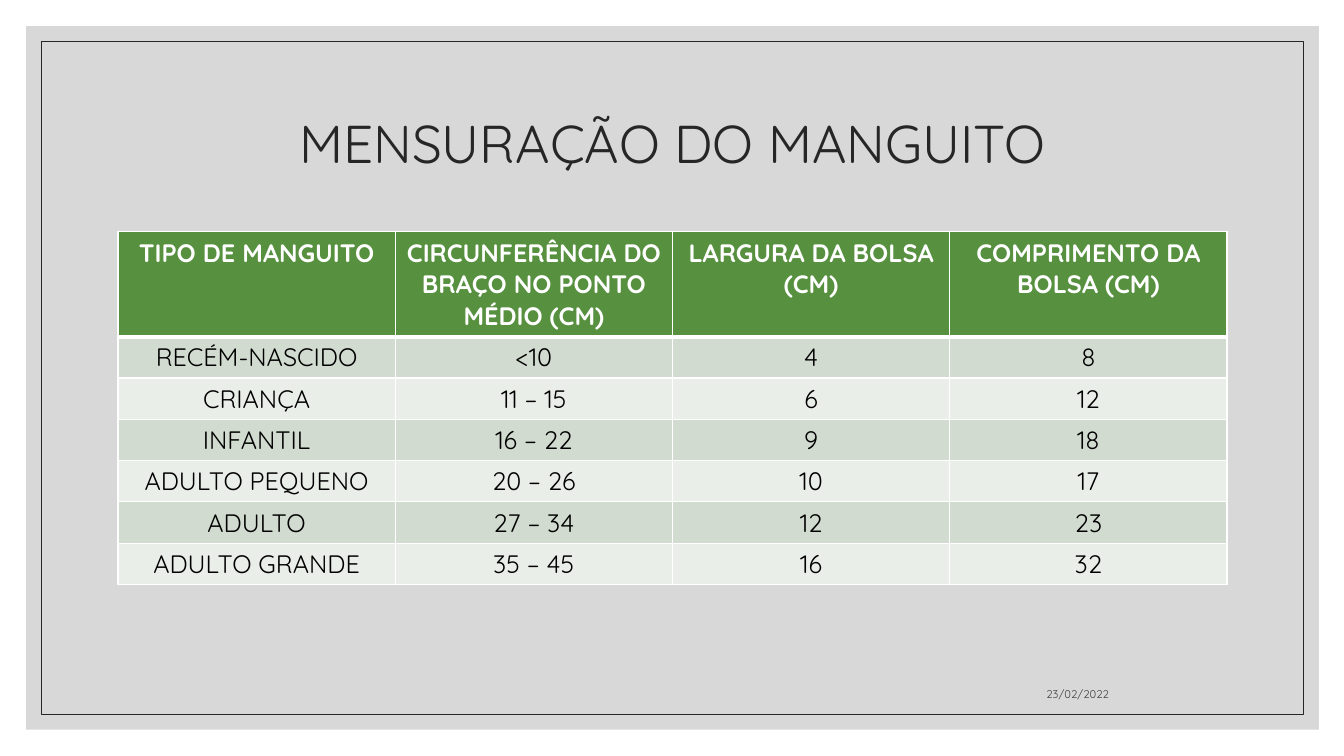
from dataclasses import dataclass

from lxml import etree
from pptx import Presentation
from pptx.dml.color import RGBColor
from pptx.enum import shapes, text
from pptx.oxml.ns import qn
from pptx.util import Inches, Pt


@dataclass(frozen=True)
class Theme:
    font: str = "Quicksand"
    panel: str = "BFBFBF"
    panel_opacity: int = 60
    ink: str = "262626"
    date_ink: str = "404040"
    header: str = "57903F"
    bands: tuple = ("D1DBCF", "EAEEE8")
    white: str = "FFFFFF"
    black: str = "000000"
    title_size: int = 38
    table_size: int = 18
    date_size: int = 8


THEME = Theme()
TABLE_LEFT, TABLE_TOP, TABLE_WIDTH = 1.17, 2.3, 11
HEADER_HEIGHT, ROW_HEIGHT = 1.04, 0.41
CUFF_ROWS = [
    ("TIPO DE MANGUITO", "CIRCUNFERÊNCIA DO BRAÇO NO PONTO MÉDIO (CM)",
     "LARGURA DA BOLSA (CM)", "COMPRIMENTO DA BOLSA (CM)"),
    ("RECÉM-NASCIDO", "<10", "4", "8"),
    ("CRIANÇA", "11 – 15", "6", "12"),
    ("INFANTIL", "16 – 22", "9", "18"),
    ("ADULTO PEQUENO", "20 – 26", "10", "17"),
    ("ADULTO", "27 – 34", "12", "23"),
    ("ADULTO GRANDE", "35 – 45", "16", "32"),
]


def write(frame, words, size, color, align, bold=False):
    frame.word_wrap = True
    frame.text = words
    para = frame.paragraphs[0]
    para.alignment = align
    for span in para.runs:
        span.font.name = THEME.font
        span.font.size = Pt(size)
        span.font.bold = bold
        span.font.color.rgb = RGBColor.from_string(color)
    return para


def add_text(page, place, words, size, color, align, anchor):
    box = page.shapes.add_textbox(*map(Inches, place))
    box.text_frame.vertical_anchor = anchor
    return write(box.text_frame, words, size, color, align)


def add_rectangle(page, place):
    rectangle = page.shapes.add_shape(shapes.MSO_SHAPE.RECTANGLE, *map(Inches, place))
    rectangle.shadow.inherit = False
    return rectangle


def add_panel(page):
    panel = add_rectangle(page, (0.26, 0.26, 12.82, 6.98))
    panel.line.fill.background()
    panel.fill.solid()
    panel.fill.fore_color.rgb = RGBColor.from_string(THEME.panel)
    color = panel.fill._xPr.find(".//" + qn("a:srgbClr"))
    etree.SubElement(color, qn("a:alpha"), val=str(THEME.panel_opacity * 1000))


def add_frame(page):
    frame = add_rectangle(page, (0.41, 0.41, 12.52, 6.68))
    frame.fill.background()
    frame.line.width = Pt(0.5)
    frame.line.color.rgb = RGBColor.from_string(THEME.ink)


def set_borders(cell, top, bottom):
    """Draw white borders; top and bottom widths are in points."""
    properties = cell._tc.get_or_add_tcPr()
    for side, width in (("L", 1), ("R", 1), ("T", top), ("B", bottom)):
        line = etree.SubElement(properties, qn(f"a:ln{side}"), w=str(Pt(width)))
        fill = etree.SubElement(line, qn("a:solidFill"))
        etree.SubElement(fill, qn("a:srgbClr"), val=THEME.white)


def add_cuff_table(page):
    body_count = len(CUFF_ROWS) - 1
    height = HEADER_HEIGHT + body_count * ROW_HEIGHT
    place = (TABLE_LEFT, TABLE_TOP, TABLE_WIDTH, height)
    table = page.shapes.add_table(len(CUFF_ROWS), len(CUFF_ROWS[0]),
                                  *map(Inches, place)).table
    for index, values in enumerate(CUFF_ROWS):
        is_header = index == 0
        table.rows[index].height = Inches(HEADER_HEIGHT if is_header else ROW_HEIGHT)
        fill = THEME.header if is_header else THEME.bands[(index - 1) % 2]
        color = THEME.white if is_header else THEME.black
        for cell, words in zip(table.rows[index].cells, values):
            set_borders(cell, top=3 if index == 1 else 1, bottom=3 if is_header else 1)
            cell.fill.solid()
            cell.fill.fore_color.rgb = RGBColor.from_string(fill)
            write(cell.text_frame, words, THEME.table_size, color,
                  text.PP_ALIGN.CENTER, bold=is_header)


def main():
    deck = Presentation()
    deck.slide_width, deck.slide_height = Inches(13.33), Inches(7.5)
    page = deck.slides.add_slide(deck.slide_layouts[6])
    add_panel(page)
    add_frame(page)
    title = add_text(page, (1.17, 0.7, 11, 1.5), "MENSURAÇÃO DO MANGUITO",
                     THEME.title_size, THEME.ink, text.PP_ALIGN.CENTER,
                     text.MSO_ANCHOR.MIDDLE)
    title.line_spacing = 0.9
    add_cuff_table(page)
    add_text(page, (7.94, 6.6, 3.16, 0.4), "23/02/2022", THEME.date_size,
             THEME.date_ink, text.PP_ALIGN.RIGHT, text.MSO_ANCHOR.BOTTOM)
    deck.save("out.pptx")


if __name__ == "__main__":
    main()
